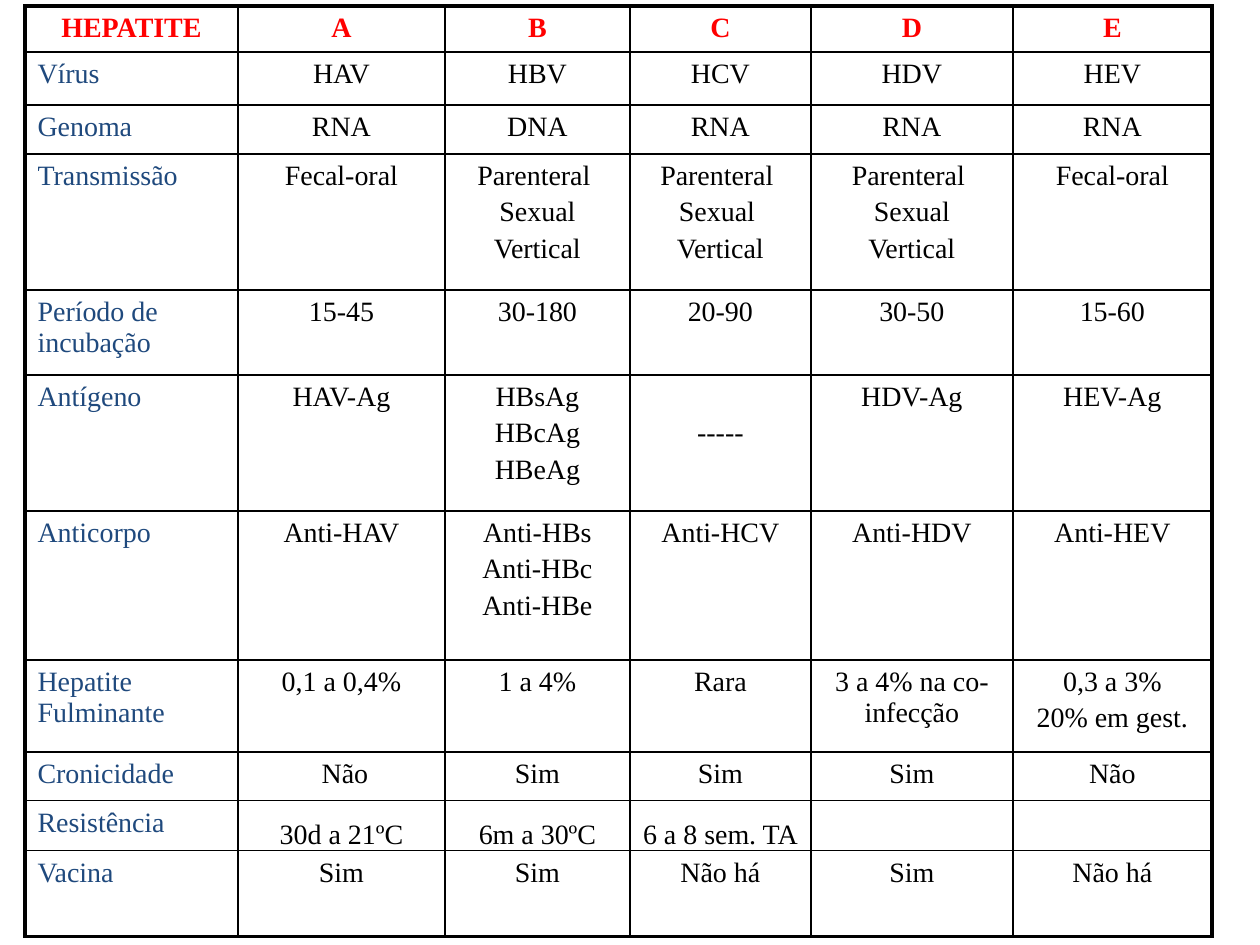
from pptx import Presentation
from pptx.dml.color import RGBColor
from pptx.enum.text import MSO_ANCHOR as ANCHOR, PP_ALIGN as ALIGN
from pptx.oxml.xmlchemy import OxmlElement
from pptx.util import Inches, Pt

PX = Inches(1) / 126
FONT = "Times New Roman"
RED = RGBColor(0xFF, 0x00, 0x00)
NAVY = RGBColor(0x1F, 0x49, 0x7D)
BLACK = RGBColor(0x00, 0x00, 0x00)
THIN, THICK = Pt(1), Pt(2.25)

COL_WIDTHS = [213, 207, 185, 181, 202, 199]
ROW_HEIGHTS = [46, 53, 49, 136, 85, 136, 149, 92, 49, 50, 86]
ROWS = [
    ["HEPATITE", "A", "B", "C", "D", "E"],
    ["Vírus", "HAV", "HBV", "HCV", "HDV", "HEV"],
    ["Genoma", "RNA", "DNA", "RNA", "RNA", "RNA"],
    ["Transmissão", "Fecal-oral", "Parenteral \nSexual\nVertical",
     "Parenteral \nSexual \nVertical", "Parenteral \nSexual\nVertical", "Fecal-oral"],
    ["Período de incubação", "15-45", "30-180", "20-90", "30-50", "15-60"],
    ["Antígeno", "HAV-Ag", "HBsAg\nHBcAg\nHBeAg", "-----", "HDV-Ag", "HEV-Ag"],
    ["Anticorpo", "Anti-HAV", "Anti-HBs\nAnti-HBc\nAnti-HBe", "Anti-HCV",
     "Anti-HDV", "Anti-HEV"],
    ["Hepatite Fulminante", "0,1 a 0,4%", "1 a 4%", "Rara",
     "3 a 4% na co-infecção", "0,3 a 3%\n20% em gest."],
    ["Cronicidade", " Não", "Sim", "Sim", "Sim", "Não"],
    ["Resistência", "30d a 21ºC", "6m a 30ºC", "6 a 8 sem. TA", "", ""],
    ["Vacina", "Sim", "Sim", "Não há", "Sim", "Não há"],
]
RESISTANCE_ROW = 9
NO_ANTIGEN = "-----"


def px(n):
    return round(n * PX)


def write(tf, text, color=BLACK, bold=False, align=ALIGN.CENTER, size=16):
    """Write one paragraph per line of text."""
    for i, line in enumerate(text.split("\n")):
        p = tf.paragraphs[0] if i == 0 else tf.add_paragraph()
        p.alignment = align
        p.space_before = Pt(size * 0.2)
        p.font.size = Pt(size)
        if line:
            r = p.add_run()
            r.text = line
            r.font.name, r.font.size = FONT, Pt(size)
            r.font.bold, r.font.color.rgb = bold, color


def set_margins(cell, left, top, right, bottom):
    cell.margin_left, cell.margin_top = px(left), px(top)
    cell.margin_right, cell.margin_bottom = px(right), px(bottom)


def set_borders(cell, **widths):
    """Draw the cell's edges; the keys are L, R, T and B, in that order."""
    tc_pr = cell._tc.get_or_add_tcPr()
    for side, width in widths.items():
        ln = OxmlElement(f"a:ln{side}")
        ln.set("w", str(width))
        fill = OxmlElement("a:solidFill")
        clr = OxmlElement("a:srgbClr")
        clr.set("val", str(BLACK))
        fill.append(clr)
        ln.append(fill)
        tc_pr.append(ln)


def add_hepatitis_table(slide, left, top):
    n_rows, n_cols = len(ROWS), len(COL_WIDTHS)
    table = slide.shapes.add_table(n_rows, n_cols, px(left), px(top),
                                   px(sum(COL_WIDTHS)), px(sum(ROW_HEIGHTS))).table
    table.first_row = table.horz_banding = False
    for col, width in zip(table.columns, COL_WIDTHS):
        col.width = px(width)
    for row, height in zip(table.rows, ROW_HEIGHTS):
        row.height = px(height)

    for i, texts in enumerate(ROWS):
        for j, text in enumerate(texts):
            cell = table.cell(i, j)
            # Thick frame outside, thin grid inside
            set_borders(cell,
                        L=THICK if j == 0 else THIN,
                        R=THICK if j == n_cols - 1 else THIN,
                        T=THICK if i == 0 else THIN,
                        B=THICK if i == n_rows - 1 else THIN)
            cell.fill.background()

            # Margins: the resistance values sit on the cell's bottom edge
            if i == RESISTANCE_ROW and j > 0:
                set_margins(cell, 1, 1, 1, 0)
                cell.vertical_anchor = ANCHOR.BOTTOM
            else:
                # The dashes stand level with the second line of the row
                set_margins(cell, 12.6, 43 if text == NO_ANTIGEN else 6.3, 12.6, 6.3)

            # Text: red header, navy row labels, black values
            if i == 0:
                write(cell.text_frame, text, color=RED, bold=True)
            elif j == 0:
                write(cell.text_frame, text, color=NAVY, align=ALIGN.LEFT)
            else:
                write(cell.text_frame, text)


def main():
    prs = Presentation()
    prs.slide_width, prs.slide_height = Inches(10), Inches(7.5)
    slide = prs.slides.add_slide(prs.slide_layouts[6])
    add_hepatitis_table(slide, 25, 6)
    prs.save("out.pptx")


if __name__ == "__main__":
    main()
